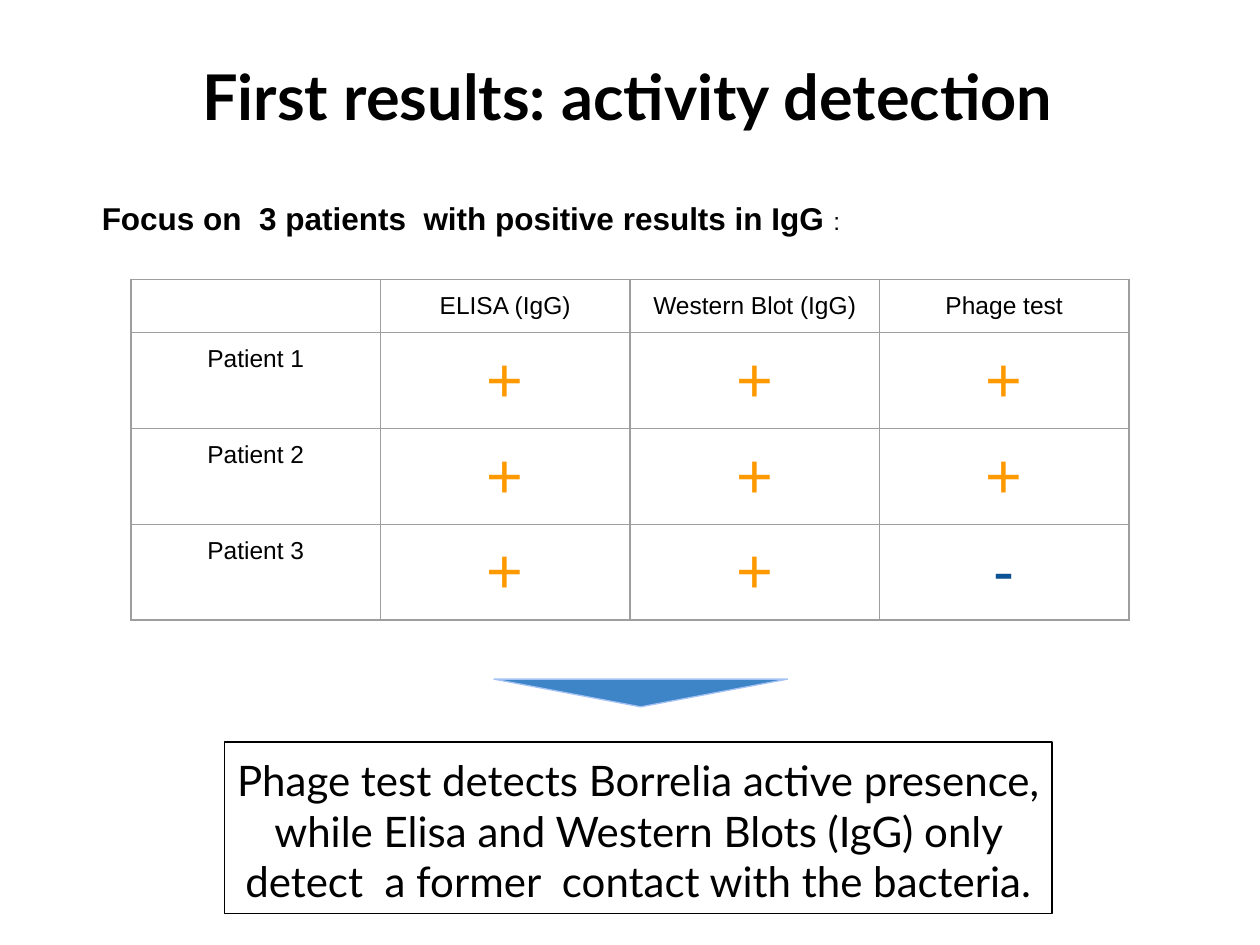
import dataclasses

import lxml.etree
import pptx
import pptx.dml.color
import pptx.enum.shapes
import pptx.enum.text
import pptx.oxml.ns
import pptx.util

Inches = pptx.util.Inches
Pt = pptx.util.Pt
ALIGN = pptx.enum.text.PP_ALIGN
SHAPE = pptx.enum.shapes.MSO_SHAPE


@dataclasses.dataclass(frozen=True)
class Theme:
    heading_font: str = "Lato"
    body_font: str = "Arial"
    black: str = "000000"
    positive: str = "FF9900"
    negative: str = "0B5394"
    grid: str = "9E9E9E"
    arrow: str = "3D85C6"
    arrow_edge: str = "A4C2F4"
    title_pt: int = 36
    conclusion_pt: int = 24
    focus_pt: int = 18
    small_pt: int = 14
    sign_pt: int = 36
    line_pt: float = 0.75
    inset: float = 0.1


@dataclasses.dataclass(frozen=True)
class Patient:
    name: str
    signs: str  # one sign per test


THEME = Theme()
TESTS = ["ELISA (IgG)", "Western Blot (IgG)", "Phage test"]
PATIENTS = [
    Patient("Patient 1", "+++"),
    Patient("Patient 2", "+++"),
    Patient("Patient 3", "++-"),
]
CONCLUSION = (
    "Phage test detects Borrelia active presence, while Elisa and Western "
    "Blots (IgG) only detect  a former  contact with the bacteria."
)


def rgb(color: str) -> pptx.dml.color.RGBColor:
    return pptx.dml.color.RGBColor.from_string(color)


def box(left: float, top: float, width: float, height: float) -> tuple:
    return tuple(Inches(v) for v in (left, top, width, height))


def style(font, name: str, size: float, color: str = THEME.black, bold: bool = False) -> None:
    font.name, font.size, font.bold = name, Pt(size), bold
    font.color.rgb = rgb(color)


def set_frame(tf, inset_y: float = THEME.inset) -> None:
    tf.word_wrap = True
    tf.auto_size = pptx.enum.text.MSO_AUTO_SIZE.NONE
    tf.vertical_anchor = pptx.enum.text.MSO_ANCHOR.TOP
    tf.margin_left = tf.margin_right = Inches(THEME.inset)
    tf.margin_top = tf.margin_bottom = Inches(inset_y)


def add_outlined(slide, kind, place: tuple, edge: str):
    sp = slide.shapes.add_shape(kind, *place)
    sp.shadow.inherit = False
    sp.line.color.rgb = rgb(edge)
    sp.line.width = Pt(THEME.line_pt)
    return sp


def set_borders(cell) -> None:
    tcPr = cell._tc.get_or_add_tcPr()
    qn = pptx.oxml.ns.qn
    for i, side in enumerate(("a:lnL", "a:lnR", "a:lnT", "a:lnB")):
        ln = lxml.etree.Element(qn(side), w=str(Pt(THEME.line_pt)))
        fill = lxml.etree.SubElement(ln, qn("a:solidFill"))
        lxml.etree.SubElement(fill, qn("a:srgbClr"), val=THEME.grid)
        tcPr.insert(i, ln)  # borders come before the fill


def fill_cell(cell, text: str, size: int, color: str) -> None:
    cell.margin_left = cell.margin_right = Inches(THEME.inset)
    cell.margin_top = cell.margin_bottom = Inches(THEME.inset)
    cell.fill.background()
    set_borders(cell)
    p = cell.text_frame.paragraphs[0]
    p.text = text
    p.alignment = ALIGN.CENTER
    style(p.font, THEME.body_font, size, color)
    for r in p.runs:
        style(r.font, THEME.body_font, size, color)


def add_results_table(slide) -> None:
    rows = [["", *TESTS]] + [[pt.name, *pt.signs] for pt in PATIENTS]
    header_height, row_height = 0.42, 0.76
    height = header_height + row_height * len(PATIENTS)
    table = slide.shapes.add_table(
        len(rows), len(rows[0]), *box(1.04, 2.22, 7.92, height)
    ).table
    table.first_row = table.horz_banding = False
    sign_colors = {"+": THEME.positive, "-": THEME.negative}
    for i, row in enumerate(rows):
        table.rows[i].height = Inches(row_height if i else header_height)
        for j, text in enumerate(row):
            size = THEME.sign_pt if text in sign_colors else THEME.small_pt
            fill_cell(table.cell(i, j), text, size, sign_colors.get(text, THEME.black))


def main() -> None:
    prs = pptx.Presentation()
    prs.slide_width, prs.slide_height = Inches(10), Inches(7.5)
    slide = prs.slides.add_slide(prs.slide_layouts[5])

    # Title
    title = slide.shapes.title
    title.left, title.top, title.width, title.height = box(0.38, 0.41, 9.2, 0.96)
    set_frame(title.text_frame, inset_y=0.05)
    p = title.text_frame.paragraphs[0]
    p.text = "First results: activity detection"
    p.alignment = ALIGN.CENTER
    style(p.runs[0].font, THEME.heading_font, THEME.title_pt, bold=True)

    # Focus line
    tf = slide.shapes.add_textbox(*box(0.71, 1.48, 6.24, 0.96)).text_frame
    set_frame(tf)
    p = tf.paragraphs[0]
    p.text = "Focus on  3 patients  with positive results in IgG "
    style(p.runs[0].font, THEME.body_font, THEME.focus_pt, bold=True)
    r = p.add_run()
    r.text = ":"
    style(r.font, THEME.body_font, THEME.small_pt)

    # Results by patient and test
    add_results_table(slide)

    # Arrow down to the conclusion
    arrow = add_outlined(
        slide, SHAPE.ISOSCELES_TRIANGLE, box(3.92, 5.39, 2.33, 0.22), THEME.arrow_edge
    )
    arrow.rotation = 180
    arrow.fill.solid()
    arrow.fill.fore_color.rgb = rgb(THEME.arrow)

    # Conclusion
    sp = add_outlined(slide, SHAPE.RECTANGLE, box(1.78, 5.89, 6.57, 1.36), THEME.black)
    sp.fill.background()
    set_frame(sp.text_frame)
    p = sp.text_frame.paragraphs[0]
    p.text = CONCLUSION
    p.alignment = ALIGN.CENTER
    style(p.runs[0].font, THEME.heading_font, THEME.conclusion_pt)

    prs.save("out.pptx")


if __name__ == "__main__":
    main()
